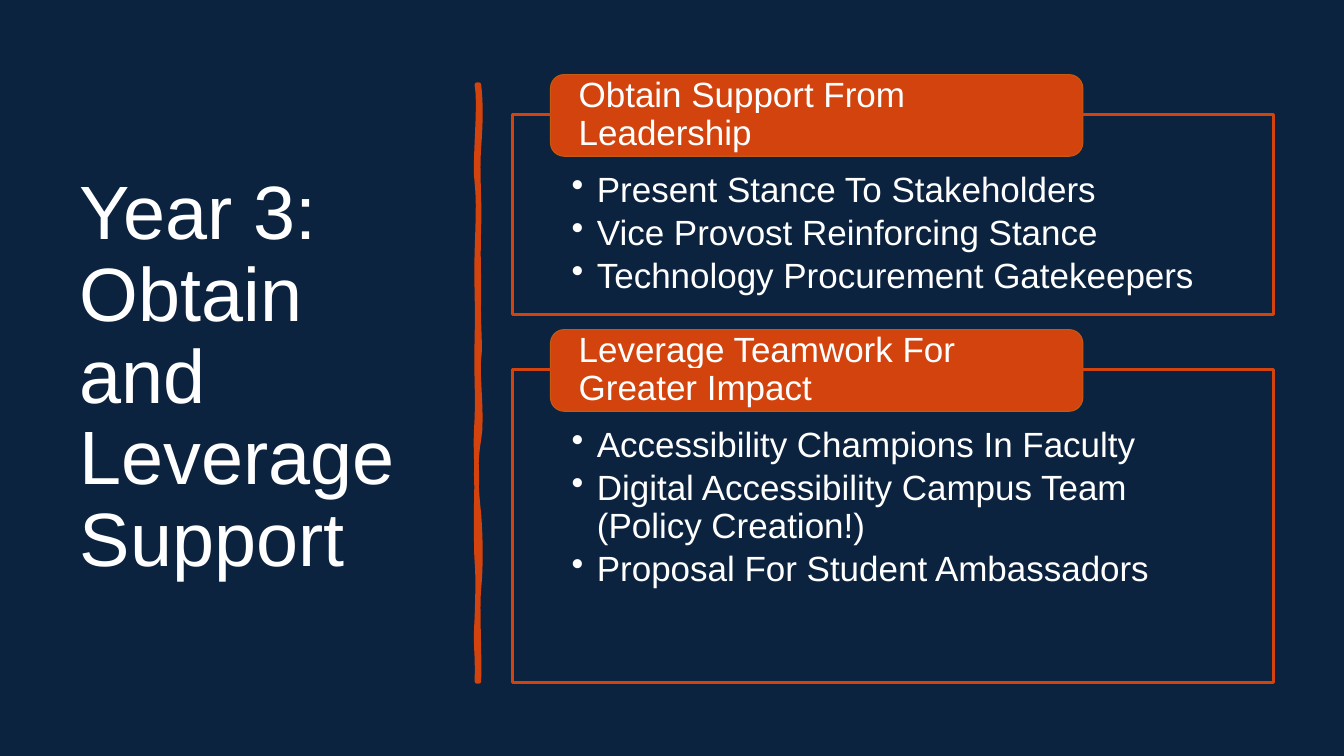
from lxml.etree import SubElement as Sub
from pptx import Presentation
from pptx.dml.color import RGBColor
from pptx.enum.shapes import MSO_SHAPE as Kind
from pptx.enum.text import MSO_ANCHOR as Anchor, MSO_AUTO_SIZE as Fit, PP_ALIGN as Align
from pptx.oxml.ns import qn
from pptx.util import Inches, Pt

NAVY, RUST, BROWN, WHITE = "0C2340", "D3430D", "C55A11", "FFFFFF"


def paint(form, tone):
    form.solid()
    form.fore_color.rgb = RGBColor.from_string(tone)


def style(para, size, after=0):
    para.alignment = Align.LEFT
    para.line_spacing = 0.9
    para.space_before = Pt(0)
    para.space_after = Pt(after)
    para.font.size = Pt(size)
    para.font.name = "Arial"
    paint(para.font.fill, WHITE)


deck = Presentation()
deck.slide_width, deck.slide_height = Inches(13.33), Inches(7.5)
slide = deck.slides.add_slide(deck.slide_layouts[5])
paint(slide.background.fill, NAVY)
shapes = slide.shapes

# Title
title = shapes.title
title.left, title.top = Inches(0.69), Inches(0.7)
title.width, title.height = Inches(3.74), Inches(6.11)
frame = title.text_frame
frame.text = "Year 3: Obtain and Leverage Support"
frame.auto_size, frame.word_wrap = Fit.NONE, True
frame.vertical_anchor = Anchor.MIDDLE
style(frame.paragraphs[0], 54)

# Hand-drawn divider: each edge is a chain of curves (two handles and an end)
right = [
    [(4.77, 1.02), (4.77, 1.19), (4.75, 1.46)],
    [(4.73, 1.73), (4.76, 1.95), (4.75, 2.26)],
    [(4.74, 2.57), (4.75, 2.62), (4.75, 2.94)],
    [(4.74, 3.25), (4.77, 3.42), (4.75, 3.56)],
    [(4.73, 3.7), (4.79, 4.14), (4.75, 4.36)],
    [(4.71, 4.57), (4.72, 4.84), (4.75, 5.1)],
    [(4.77, 5.36), (4.77, 5.64), (4.75, 5.84)],
    [(4.73, 6.03), (4.76, 6.5), (4.75, 6.76)],
]
left = [
    [(4.74, 6.76), (4.73, 6.76), (4.73, 6.76)],
    [(4.74, 6.46), (4.71, 6.44), (4.73, 6.13)],
    [(4.74, 5.83), (4.74, 5.7), (4.73, 5.57)],
    [(4.72, 5.44), (4.72, 4.95), (4.73, 4.77)],
    [(4.73, 4.59), (4.71, 4.45), (4.73, 4.15)],
    [(4.74, 3.86), (4.72, 3.73), (4.73, 3.35)],
    [(4.74, 2.98), (4.72, 2.81), (4.73, 2.5)],
    [(4.74, 2.18), (4.75, 2), (4.73, 1.81)],
    [(4.7, 1.63), (4.77, 1.04), (4.73, 0.84)],
]
start = last = (4.75, 0.84)
dots = []
for one, two, end in right + left:
    for step in range(1, 9):
        t = step / 8
        u = 1 - t
        dots.append([Inches(u**3 * a + 3 * u * u * t * b + 3 * u * t * t * c + t**3 * d)
                     for a, b, c, d in zip(last, one, two, end)])
    last = end
pen = shapes.build_freeform(Inches(start[0]), Inches(start[1]))
pen.add_line_segments(dots, close=True)
rule = pen.convert_to_shape()
rule.shadow.inherit = False
paint(rule.fill, RUST)
paint(rule.line.fill, RUST)
rule.line.width = Pt(3.25)

# Sections: top of tag, height of box, heading, points
parts = [
    (0.74, 1.98, "Obtain Support From Leadership",
     ["Present Stance To Stakeholders", "Vice Provost Reinforcing Stance",
      "Technology Procurement Gatekeepers"]),
    (3.27, 3.1, "Leverage Teamwork For Greater Impact",
     ["Accessibility Champions In Faculty",
      "Digital Accessibility Campus Team (Policy Creation!)",
      "Proposal For Student Ambassadors"]),
]
for top, tall, head, points in parts:
    tag = shapes.add_shape(Kind.ROUNDED_RECTANGLE, Inches(5.46), Inches(top),
                           Inches(5.28), Inches(0.81))
    box = shapes.add_shape(Kind.RECTANGLE, Inches(5.08), Inches(top + 0.4),
                           Inches(7.55), Inches(tall))
    paint(tag.fill, RUST)
    box.fill.background()
    looks = [
        (tag, BROWN, 0.75, Anchor.MIDDLE, (0.24, 0.04, 0.04), [head]),
        (box, RUST, 2.25, Anchor.TOP, (0.59, 0.57, 0.19), points),
    ]
    for shape, edge, width, anchor, (side, above, below), lines in looks:
        shape.shadow.inherit = False
        paint(shape.line.fill, edge)
        shape.line.width = Pt(width)
        frame = shape.text_frame
        frame.word_wrap = True
        frame.vertical_anchor = anchor
        frame.margin_left = frame.margin_right = Inches(side)
        frame.margin_top, frame.margin_bottom = Inches(above), Inches(below)
        frame.text = "\n".join(lines)
        for para in frame.paragraphs:
            style(para, 25, 3.75 if shape is box else 0)
            if shape is box:
                para.level = 1
                props = para._p.get_or_add_pPr()
                props.set("marL", str(Inches(0.25)))
                props.set("indent", str(Inches(-0.25)))
                mark = Sub(props, qn("a:buChar"), char="•")
                props.find(qn("a:defRPr")).addprevious(mark)

deck.save("out.pptx")
